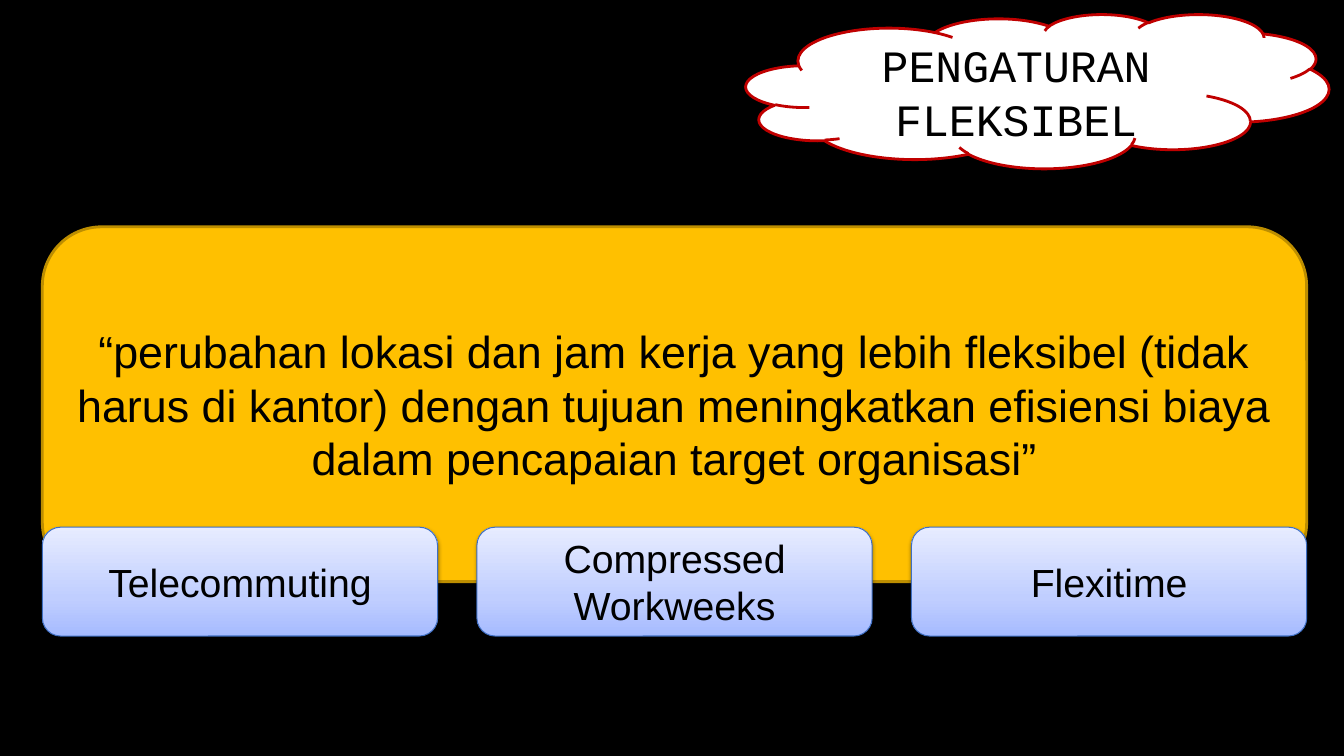
from dataclasses import dataclass

from lxml.etree import SubElement
from pptx import Presentation
from pptx.dml.color import RGBColor
from pptx.enum.shapes import MSO_SHAPE
from pptx.enum.text import MSO_ANCHOR, MSO_AUTO_SIZE, PP_ALIGN
from pptx.oxml.ns import qn
from pptx.shapes.autoshape import Shape
from pptx.slide import Slide
from pptx.util import Inches, Pt

BLACK = RGBColor(0x00, 0x00, 0x00)
WHITE = RGBColor(0xFF, 0xFF, 0xFF)
RED = RGBColor(0xC0, 0x00, 0x00)
AMBER = RGBColor(0xFF, 0xC0, 0x00)
DARK_AMBER = RGBColor(0xBD, 0x8E, 0x00)
BLUE = RGBColor(0x3F, 0x6F, 0xC3)
CARD_BOTTOM = RGBColor(0xA6, 0xBB, 0xFF)
CARD_MIDDLE = RGBColor(0xC0, 0xCE, 0xFF)
CARD_TOP = RGBColor(0xE7, 0xEC, 0xFF)

MARGIN = 0.42
CARD_WIDTH = 3.92
CARD_STEP = 4.31
OPTIONS = ("Telecommuting", "Compressed Workweeks", "Flexitime")
DEFINITION = (
    "“perubahan lokasi dan jam kerja yang lebih fleksibel (tidak harus di kantor) "
    "dengan tujuan meningkatkan efisiensi biaya dalam pencapaian target organisasi”"
)


@dataclass(frozen=True)
class Area:
    left: float
    top: float
    width: float
    height: float

    def place(self) -> tuple[int, int, int, int]:
        return (Inches(self.left), Inches(self.top),
                Inches(self.width), Inches(self.height))


@dataclass(frozen=True)
class Panel:
    kind: MSO_SHAPE
    area: Area
    line_color: RGBColor
    line_width: float
    fill: RGBColor | None = None


def write_text(shape: Shape, text: str, size: int, font: str = "Arial") -> None:
    frame = shape.text_frame
    frame.text = text
    frame.word_wrap = True
    frame.auto_size = MSO_AUTO_SIZE.NONE
    frame.vertical_anchor = MSO_ANCHOR.MIDDLE
    para = frame.paragraphs[0]
    para.alignment = PP_ALIGN.CENTER
    para.line_spacing = 1.0
    span = para.runs[0]
    span.font.name = font
    span.font.size = Pt(size)
    span.font.color.rgb = BLACK


def fill_card(shape: Shape) -> None:
    shape.fill.gradient()
    shape.fill.gradient_angle = 90
    for stop, color in zip(shape.fill.gradient_stops, (CARD_BOTTOM, CARD_TOP)):
        stop.color.rgb = color
    stops = shape._element.spPr.find(qn("a:gradFill")).find(qn("a:gsLst"))
    middle = SubElement(stops, qn("a:gs"), pos="35000")
    SubElement(middle, qn("a:srgbClr"), val=str(CARD_MIDDLE))
    stops.insert(1, middle)


def add_card_shadow(shape: Shape) -> None:
    effects = shape._element.spPr.find(qn("a:effectLst"))
    shadow = SubElement(effects, qn("a:outerShdw"), blurRad=str(Pt(3.1)),
                        dist=str(Pt(1.6)), dir="5400000", rotWithShape="0")
    color = SubElement(shadow, qn("a:srgbClr"), val=str(BLACK))
    SubElement(color, qn("a:alpha"), val="38000")


def add_panel(page: Slide, panel: Panel) -> Shape:
    box = page.shapes.add_shape(panel.kind, *panel.area.place())
    box.shadow.inherit = False
    if panel.fill is None:
        fill_card(box)
        add_card_shadow(box)
    else:
        box.fill.solid()
        box.fill.fore_color.rgb = panel.fill
    box.line.color.rgb = panel.line_color
    box.line.width = Pt(panel.line_width)
    return box


def add_title(page: Slide, text: str, area: Area) -> None:
    title = page.shapes.title
    title.left, title.top, title.width, title.height = area.place()
    write_text(title, text, 32, "Courier New")
    page.shapes._spTree.append(title._element)


def main() -> None:
    deck = Presentation()
    deck.slide_width = Inches(13.33)
    deck.slide_height = Inches(7.5)
    page = deck.slides.add_slide(deck.slide_layouts[5])
    page.background.fill.solid()
    page.background.fill.fore_color.rgb = BLACK

    add_panel(page, Panel(MSO_SHAPE.CLOUD, Area(7.4, 0.14, 5.78, 1.53), RED, 2, WHITE))
    add_title(page, "PENGATURAN FLEKSIBEL", Area(7.98, 0.26, 4.2, 1.3))

    definition = add_panel(page, Panel(
        MSO_SHAPE.ROUNDED_RECTANGLE, Area(MARGIN, 2.25, 12.54, 3.52),
        DARK_AMBER, 2, AMBER))
    write_text(definition, DEFINITION, 32)

    for index, option in enumerate(OPTIONS):
        area = Area(MARGIN + index * CARD_STEP, 5.23, CARD_WIDTH, 1.08)
        card = add_panel(page, Panel(MSO_SHAPE.ROUNDED_RECTANGLE, area, BLUE, 0.75))
        write_text(card, option, 28)

    deck.save("out.pptx")


if __name__ == "__main__":
    main()
